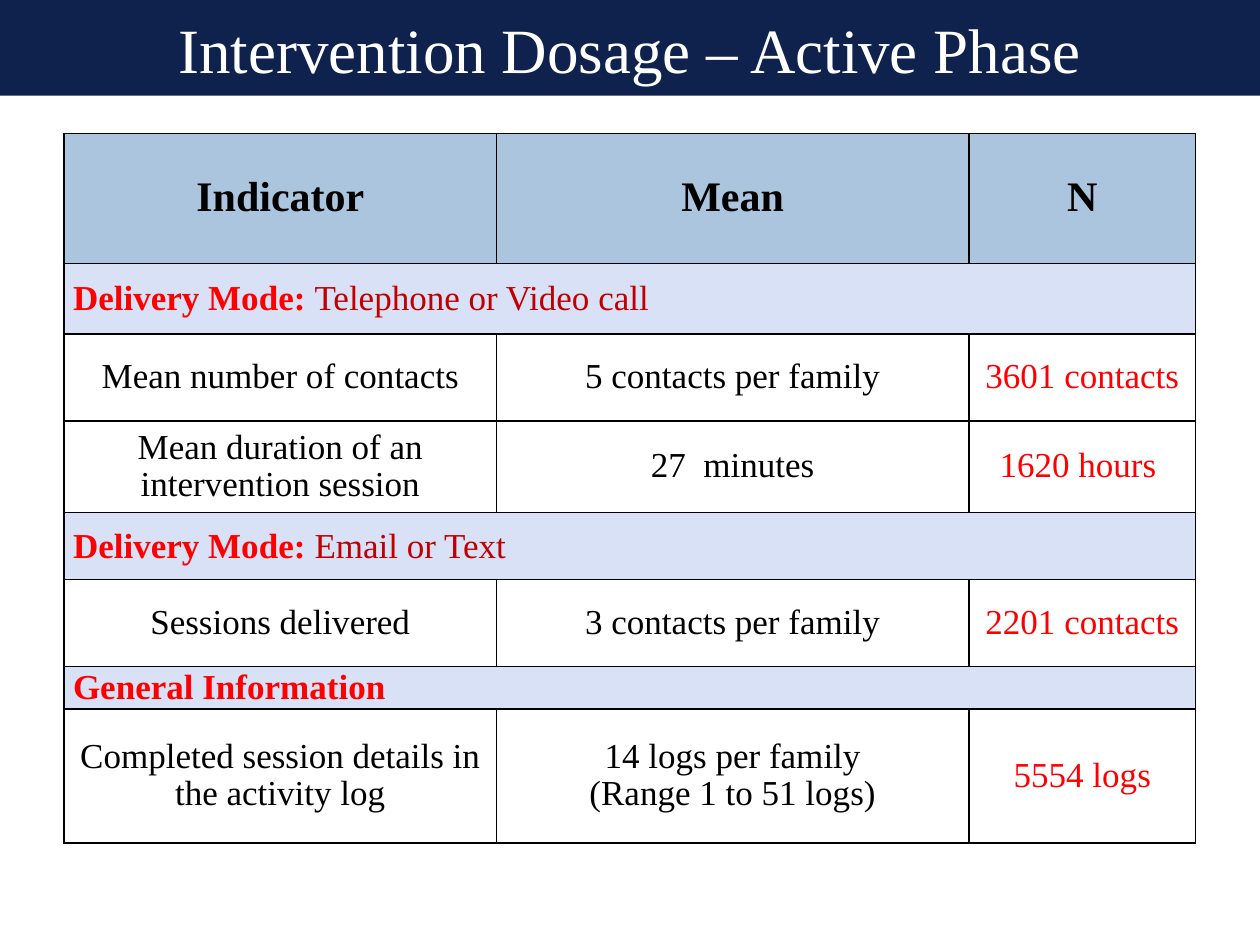
from lxml import etree
from pptx import Presentation
from pptx.dml.color import RGBColor
from pptx.enum import text
from pptx.oxml import ns
from pptx.util import Inches, Pt

FONT = "Times New Roman"
BLACK, RED, DARK_RED = "000000", "FF0000", "C00000"
COLS = [3.43, 3.75, 1.8]
# Row height and cells; a row with one cell is a band across the table,
# given as its bold label and the plain words after it.
ROWS = [
    (1.03, ["Indicator", "Mean", "N"]),
    (0.56, [("Delivery Mode: ", "Telephone or Video call")]),
    (0.69, ["Mean number of contacts", "5 contacts per family", "3601 contacts"]),
    (0.73, ["Mean duration of an intervention session", "27  minutes", "1620 hours "]),
    (0.53, [("Delivery Mode: ", "Email or Text")]),
    (0.69, ["Sessions delivered", "3 contacts per family", "2201 contacts"]),
    (0.34, [("General Information", "")]),
    (1.06, ["Completed session details in the activity log",
            "14 logs per family\n(Range 1 to 51 logs)", "5554 logs"]),
]


def rgb(code):
    return RGBColor.from_string(code)


def style(font, size, color, bold=False):
    font.name, font.size, font.bold = FONT, Pt(size), bold
    font.color.rgb = rgb(color)


def add_title(slide, left, top, width, height):
    title = slide.shapes.title
    title.left, title.top = Inches(left), Inches(top)
    title.width, title.height = Inches(width), Inches(height)
    title.fill.solid()
    title.fill.fore_color.rgb = rgb("0F214D")
    frame = title.text_frame
    frame.text = "Intervention Dosage – Active Phase"
    frame.margin_left = frame.margin_right = 0
    frame.margin_top = frame.margin_bottom = 0
    frame.vertical_anchor = text.MSO_ANCHOR.MIDDLE
    para = frame.paragraphs[0]
    para.alignment = text.PP_ALIGN.CENTER
    style(para.font, 36, "FFFFFF")


def format_cell(cell, fill=None):
    """Set margins, anchor, borders and fill."""
    cell.margin_left = cell.margin_right = Inches(0.07)
    cell.margin_top = cell.margin_bottom = 0
    cell.vertical_anchor = text.MSO_ANCHOR.MIDDLE
    props = cell._tc.get_or_add_tcPr()
    for side in ("lnL", "lnR", "lnT", "lnB"):
        line = etree.SubElement(props, ns.qn(f"a:{side}"), w=str(Pt(1)))
        solid = etree.SubElement(line, ns.qn("a:solidFill"))
        etree.SubElement(solid, ns.qn("a:srgbClr"), val=BLACK)
    if fill:
        cell.fill.solid()
        cell.fill.fore_color.rgb = rgb(fill)
    else:
        cell.fill.background()


def write_band(cell, label, words):
    para = cell.text_frame.paragraphs[0]
    para.alignment = text.PP_ALIGN.LEFT
    for part, color, bold in ((label, RED, True), (words, DARK_RED, False)):
        if part:
            run = para.add_run()
            run.text = part
            style(run.font, 20, color, bold)


def write_cell(cell, words, size, color, bold):
    cell.text_frame.text = words
    for para in cell.text_frame.paragraphs:
        para.alignment = text.PP_ALIGN.CENTER
        para.line_spacing = 0.95
        style(para.font, size, color, bold)


def add_dosage(slide, left, top):
    width, height = sum(COLS), sum(row[0] for row in ROWS)
    table = slide.shapes.add_table(len(ROWS), len(COLS), Inches(left), Inches(top),
                                   Inches(width), Inches(height)).table
    table.first_row = table.horz_banding = False
    for col, size in zip(table.columns, COLS):
        col.width = Inches(size)
    for i, (size, words) in enumerate(ROWS):
        table.rows[i].height = Inches(size)
        band, head = len(words) == 1, i == 0
        fill = "ACC5DE" if head else "D9E1F7" if band else None
        cells = [table.cell(i, j) for j in range(len(COLS))]
        for cell in cells:
            format_cell(cell, fill)
        if band:
            cells[0].merge(cells[-1])
            write_band(cells[0], *words[0])
            continue
        for j, (cell, item) in enumerate(zip(cells, words)):
            color = RED if j == 2 and not head else BLACK
            write_cell(cell, item, 24 if head else 20, color, head)


def main():
    deck = Presentation()
    deck.slide_width, deck.slide_height = Inches(10), Inches(7.5)
    slide = deck.slides.add_slide(deck.slide_layouts[5])
    add_title(slide, 0, 0, 10, 0.76)
    add_dosage(slide, 0.51, 1.06)
    deck.save("out.pptx")


if __name__ == "__main__":
    main()
